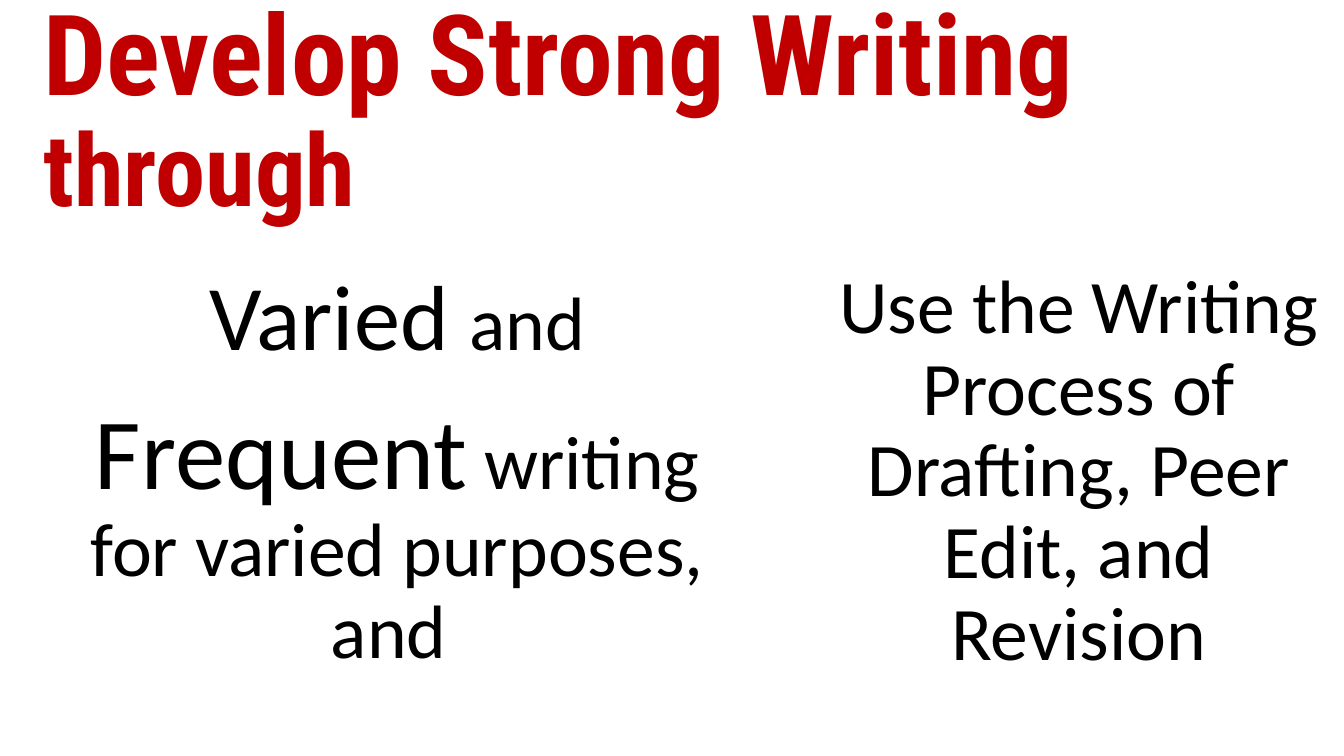
from typing import NamedTuple

from pptx import Presentation
from pptx import util as u
from pptx.dml.color import RGBColor
from pptx.enum import shapes, text

PX = 9144
WHITE, BLACK, RED = "FFFFFF", "000000", "C00000"


class Run(NamedTuple):
    """A stretch of words in one size."""
    words: str
    size: int


class Panel(NamedTuple):
    """A centred block of writing advice, measured in px."""
    left: int
    top: int
    width: int
    height: int
    paragraphs: list[list[Run]]


HEADING = [[Run("Develop Strong Writing ", 80), Run("through", 72)]]
PANELS = [
    Panel(33, 240, 722, 458, [
        [Run(" ", 54), Run("Varied ", 66), Run("and ", 54)],
        [Run("Frequent", 72), Run(" writing for varied purposes, and ", 54)],
    ]),
    Panel(807, 240, 526, 457, [
        [Run("Use the Writing Process of Drafting, Peer Edit, and Revision", 54)],
    ]),
]


def px(length: int) -> u.Emu:
    """Turn px into EMU."""
    return u.Emu(length * PX)


def rgb(color: str) -> RGBColor:
    """Turn a hex string into a colour."""
    return RGBColor.from_string(color)


def write(frame, paragraphs: list[list[Run]], *, font: str, color: str,
          align, bold: bool = False, after: int = 0) -> None:
    """Fill a text frame with formatted paragraphs."""
    frame.word_wrap = True
    frame.auto_size = text.MSO_AUTO_SIZE.NONE
    frame.vertical_anchor = text.MSO_ANCHOR.MIDDLE
    for index, runs in enumerate(paragraphs):
        paragraph = frame.add_paragraph() if index else frame.paragraphs[0]
        paragraph.alignment = align
        paragraph.line_spacing = 0.9
        paragraph.space_before = u.Pt(0)
        paragraph.space_after = u.Pt(after)
        for words, size in runs:
            run = paragraph.add_run()
            run.text = words
            run.font.name = font
            run.font.size = u.Pt(size)
            run.font.bold = bold
            run.font.color.rgb = rgb(color)


def add_heading(slide) -> None:
    """Place and format the slide title."""
    heading = slide.shapes.title
    heading.left, heading.top = px(33), px(40)
    heading.width, heading.height = px(1260), px(145)
    write(heading.text_frame, HEADING, font="Roboto Condensed", color=RED,
          align=text.PP_ALIGN.LEFT, bold=True)


def add_panel(slide, panel: Panel) -> None:
    """Draw one white panel with its advice."""
    block = slide.shapes.add_shape(
        shapes.MSO_SHAPE.RECTANGLE, px(panel.left), px(panel.top),
        px(panel.width), px(panel.height))
    block.shadow.inherit = False
    block.fill.solid()
    block.fill.fore_color.rgb = rgb(WHITE)
    block.line.color.rgb = rgb(WHITE)
    block.line.width = u.Pt(1)
    frame = block.text_frame
    frame.margin_left = frame.margin_right = px(23)
    frame.margin_top = frame.margin_bottom = px(23)
    write(frame, panel.paragraphs, font="Calibri", color=BLACK,
          align=text.PP_ALIGN.CENTER, after=23)


def main() -> None:
    """Build and save the slide."""
    deck = Presentation()
    deck.slide_width, deck.slide_height = px(1333), px(750)
    slide = deck.slides.add_slide(deck.slide_layouts.get_by_name("Title Only"))
    slide.background.fill.solid()
    slide.background.fill.fore_color.rgb = rgb(WHITE)
    add_heading(slide)
    for panel in PANELS:
        add_panel(slide, panel)
    deck.save("out.pptx")


if __name__ == "__main__":
    main()
